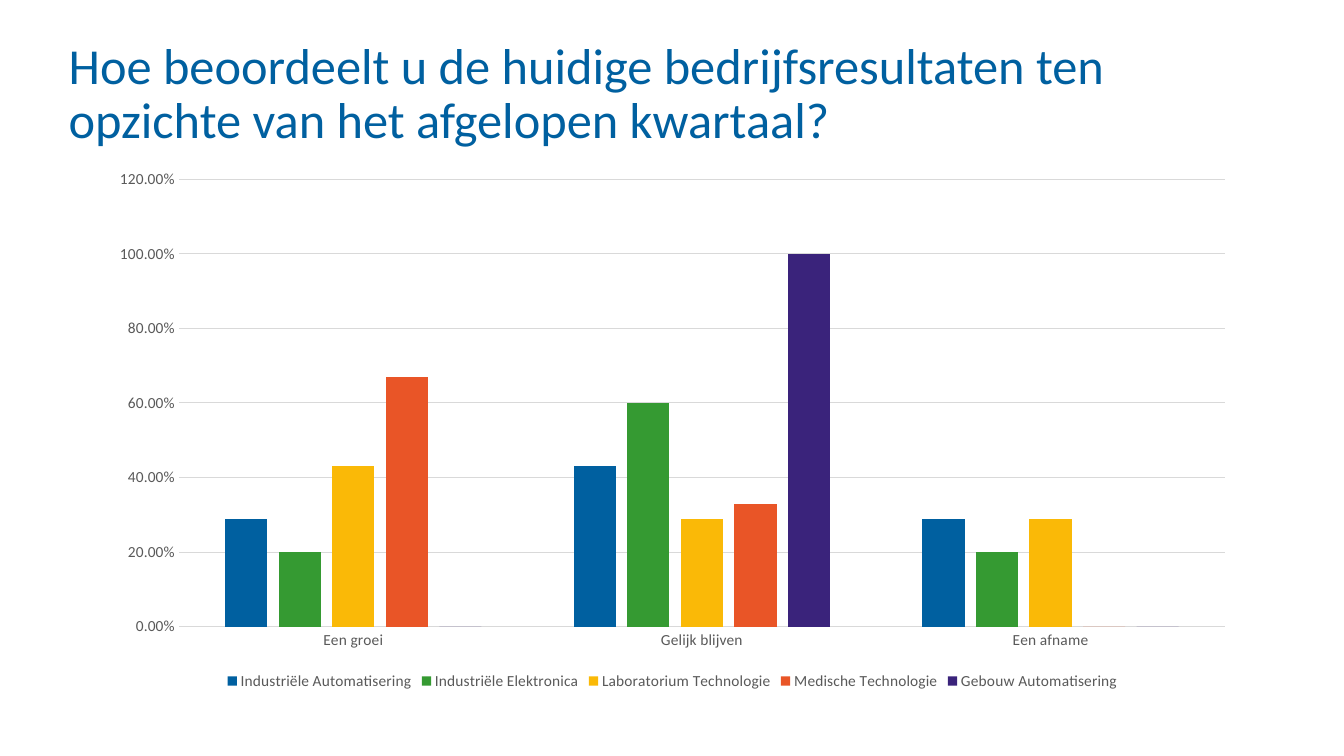
"""Build a slide with a clustered column chart of quarterly business results by sector."""
from dataclasses import dataclass

from pptx import Presentation
from pptx import util as u
from pptx.chart.data import CategoryChartData
from pptx.dml.color import RGBColor
from pptx.enum import chart as ch, text


@dataclass(frozen=True)
class Theme:
    font: str = "Calibri"
    title_size: int = 36
    label_size: int = 11
    title: str = "0060A0"
    label: str = "595959"
    grid: str = "D9D9D9"
    sectors: tuple = ("0060A0", "359A32", "FAB907", "E95527", "3A237B")


theme = Theme()


def style_font(font, size, color):
    font.name = theme.font
    font.size = u.Pt(size)
    font.bold = False
    font.color.rgb = RGBColor.from_string(color)


def style_line(line):
    line.color.rgb = RGBColor.from_string(theme.grid)
    line.width = u.Pt(0.75)


deck = Presentation()
deck.slide_width, deck.slide_height = u.Cm(33.87), u.Cm(19.05)
slide = deck.slides.add_slide(deck.slide_layouts[5])

question = slide.shapes.title
question.left, question.top = u.Cm(1.73), u.Cm(1.02)
question.width, question.height = u.Cm(30.33), u.Cm(1.93)
frame = question.text_frame
frame.text = "Hoe beoordeelt u de huidige bedrijfsresultaten ten opzichte van het afgelopen kwartaal?"
frame.margin_left = frame.margin_right = frame.margin_top = frame.margin_bottom = 0
frame.word_wrap = True
frame.auto_size = text.MSO_AUTO_SIZE.NONE
frame.vertical_anchor = text.MSO_ANCHOR.TOP
heading = frame.paragraphs[0]
heading.alignment = text.PP_ALIGN.LEFT
heading.line_spacing = 0.9
style_font(heading.runs[0].font, theme.title_size, theme.title)

answers = CategoryChartData(number_format="0.00%")
answers.categories = ["Een groei", "Gelijk blijven", "Een afname"]
shares = {
    "Industriële Automatisering": (0.29, 0.43, 0.29),
    "Industriële Elektronica": (0.2, 0.6, 0.2),
    "Laboratorium Technologie": (0.43, 0.29, 0.29),
    "Medische Technologie": (0.67, 0.33, 0),
    "Gebouw Automatisering": (0, 1, 0),
}
for sector, values in shares.items():
    answers.add_series(sector, values)

results = slide.shapes.add_chart(
    ch.XL_CHART_TYPE.COLUMN_CLUSTERED,
    u.Cm(2.44), u.Cm(4.01), u.Cm(29.01), u.Cm(13.49), answers,
).chart
results.has_title = False
style_font(results.font, theme.label_size, theme.label)

columns = results.plots[0]
columns.gap_width = 219
columns.overlap = -27
columns.vary_by_categories = False
for series, color in zip(columns.series, theme.sectors):
    series.invert_if_negative = False
    series.format.fill.solid()
    series.format.fill.fore_color.rgb = RGBColor.from_string(color)

for axis in (results.category_axis, results.value_axis):
    axis.major_tick_mark = axis.minor_tick_mark = ch.XL_TICK_MARK.NONE
    style_font(axis.tick_labels.font, theme.label_size, theme.label)
style_line(results.category_axis.format.line)

share_axis = results.value_axis
share_axis.minimum_scale, share_axis.maximum_scale = 0, 1.2
share_axis.major_unit = 0.2
share_axis.format.line.fill.background()
share_axis.has_major_gridlines = True
style_line(share_axis.major_gridlines.format.line)
share_axis.tick_labels.number_format = "0.00%"
share_axis.tick_labels.number_format_is_linked = False

results.has_legend = True
results.legend.position = ch.XL_LEGEND_POSITION.BOTTOM
results.legend.include_in_layout = False
style_font(results.legend.font, theme.label_size, theme.label)

deck.save("out.pptx")
